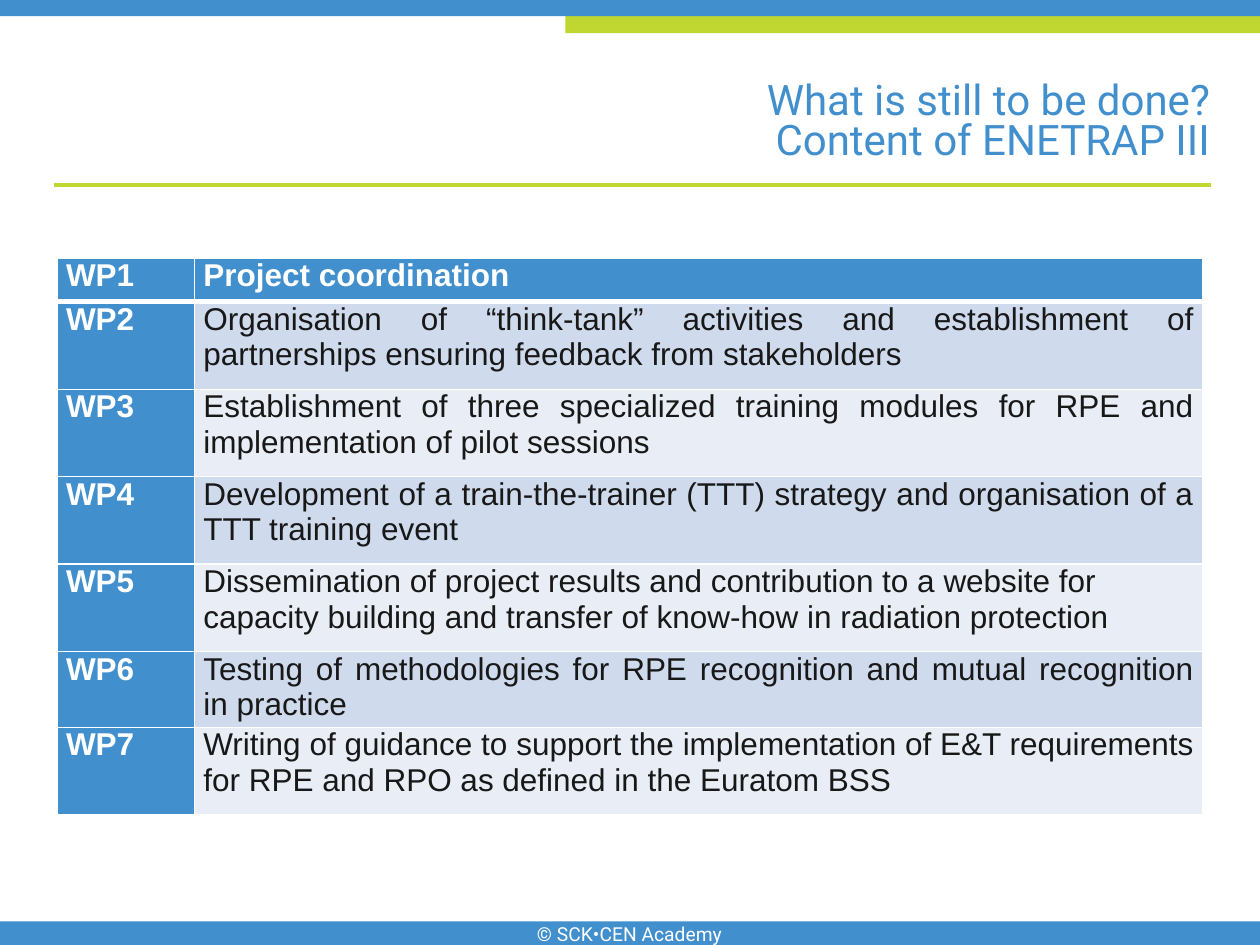
from lxml.etree import SubElement as Sub
from pptx import Presentation
from pptx.dml.color import RGBColor
from pptx.enum.shapes import MSO_CONNECTOR as Link, MSO_SHAPE as Shape
from pptx.enum.text import MSO_ANCHOR as Anchor, PP_ALIGN as Align
from pptx.oxml.ns import qn
from pptx.util import Pt

BLUE = RGBColor(0x41, 0x8F, 0xCD)
LIME = RGBColor(0xBF, 0xD7, 0x30)
WHITE = RGBColor(0xFF, 0xFF, 0xFF)
INK = RGBColor(0x18, 0x18, 0x18)
BANDS = [RGBColor(0xE9, 0xEE, 0xF6), RGBColor(0xCF, 0xDB, 0xED)]

WIDE, HIGH = 720, 540
TITLE = "What is still to be done?\vContent of ENETRAP III"
TASKS = [
    "Project coordination",
    "Organisation of “think-tank” activities and establishment of "
    "partnerships ensuring feedback from stakeholders",
    "Establishment of three specialized training modules for RPE and "
    "implementation of pilot sessions",
    "Development of a train-the-trainer (TTT) strategy and organisation "
    "of a TTT training event",
    "Dissemination of project results and contribution to a website for "
    "capacity building and transfer of know-how in radiation protection",
    "Testing of methodologies for RPE recognition and mutual recognition "
    "in practice",
    "Writing of guidance to support the implementation of E&T "
    "requirements for RPE and RPO as defined in the Euratom BSS",
]
LEFT_TASK = 4  # the one task that is not justified
ROWS = [25, 50, 50, 50, 50, 25, 50]
COLS = [78.5, 576]


def write(frame, text, size=18, font="Arial", color=INK, bold=False,
          align=Align.JUSTIFY, lead=None):
    """Put one formatted paragraph into a text frame."""
    frame.word_wrap = True
    para = frame.paragraphs[0]
    para.text = text
    para.alignment = align
    if lead:
        para.line_spacing = lead
    for run in para.runs:
        run.font.size, run.font.name = Pt(size), font
        run.font.bold, run.font.color.rgb = bold, color


def add_text(slide, box, text, **style):
    frame = slide.shapes.add_textbox(*map(Pt, box)).text_frame
    frame.vertical_anchor = Anchor.MIDDLE
    write(frame, text, font="Roboto", **style)


def add_bar(slide, box, color):
    bar = slide.shapes.add_shape(Shape.RECTANGLE, *map(Pt, box))
    bar.shadow.inherit = False
    bar.fill.solid()
    bar.fill.fore_color.rgb = color
    bar.line.fill.background()


def add_head(slide, x, y, w, h):
    # Top bars
    add_bar(slide, (x + 323, y + 9, w - 323, 10), LIME)
    add_bar(slide, (x, y, w, 9.3), BLUE)
    # Title and rule
    add_text(slide, (x + 144, y + 42.5, 554.5, 56), TITLE, size=24,
             color=BLUE, align=Align.RIGHT, lead=0.8)
    ends = (x + 31, y + h, x + 692, y + h)
    rule = slide.shapes.add_connector(Link.STRAIGHT, *map(Pt, ends))
    rule.line.color.rgb = LIME
    rule.line.width = Pt(2.25)
    Sub(rule._element.spPr, qn("a:effectLst"))


def add_foot(slide, x, y, w, h):
    add_bar(slide, (x, y, w, h), BLUE)
    add_text(slide, (x + 32.5, y - 3.5, w - 65.5, 21), "© SCK•CEN Academy",
             size=11, color=WHITE, align=Align.CENTER)


def edge(cell, **widths):
    """Draw white cell borders; keys are the sides L, R, T and B."""
    props = cell._tc.get_or_add_tcPr()
    for side, width in widths.items():
        line = Sub(props, qn(f"a:ln{side}"), w=str(Pt(width)))
        fill = Sub(line, qn("a:solidFill"))
        Sub(fill, qn("a:srgbClr"), val=str(WHITE))


def add_plan(slide, x, y, w, h):
    box = map(Pt, (x, y, w, h))
    grid = slide.shapes.add_table(len(ROWS), len(COLS), *box).table
    for col, width in zip(grid.columns, COLS):
        col.width = Pt(width)
    for i, (row, high, task) in enumerate(zip(grid.rows, ROWS, TASKS)):
        row.height = Pt(high)
        for j, text in enumerate((f"WP{i + 1}", task)):
            cell = row.cells[j]
            head = i == 0 or j == 0
            cell.margin_left = cell.margin_right = Pt(5)
            cell.margin_top = cell.margin_bottom = 0
            edge(cell, L=1, R=1, T=3 if i == 1 else 1, B=3 if i == 0 else 1)
            cell.fill.solid()
            cell.fill.fore_color.rgb = BLUE if head else BANDS[i % 2]
            plain = j == 1 and i == LEFT_TASK
            write(cell.text_frame, text, bold=head,
                  color=WHITE if head else INK,
                  align=Align.LEFT if plain else Align.JUSTIFY)


def main():
    deck = Presentation()
    deck.slide_width, deck.slide_height = Pt(WIDE), Pt(HIGH)
    slide = deck.slides.add_slide(deck.slide_layouts[6])
    add_foot(slide, 0, 526.5, WIDE, 13.5)
    add_head(slide, 0, 0, WIDE, 105.8)
    add_plan(slide, 32.75, 147.5, sum(COLS), sum(ROWS))
    deck.save("out.pptx")


if __name__ == "__main__":
    main()
